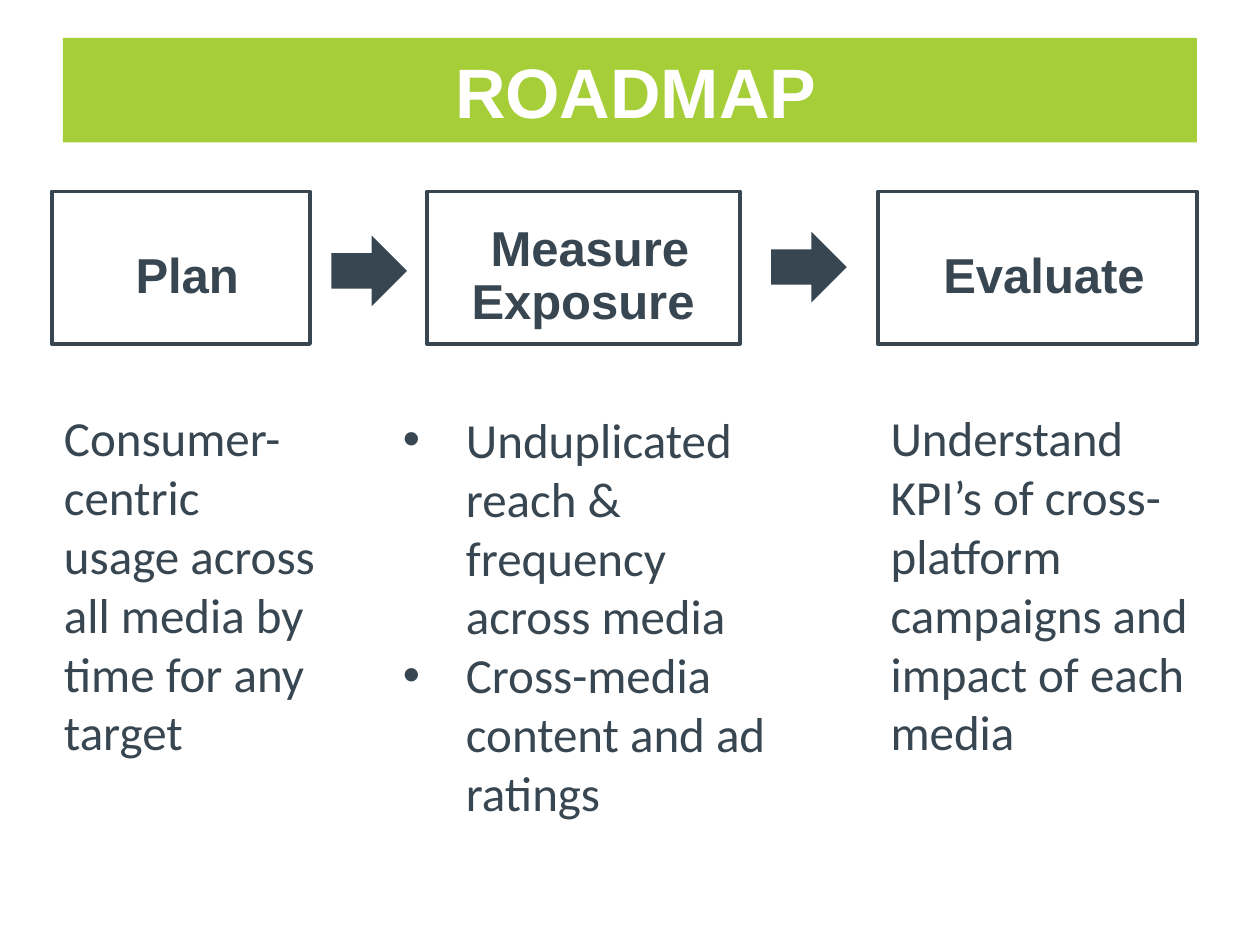
import pptx
import pptx.util
import pptx.dml.color
import pptx.enum.shapes
import pptx.enum.text
import pptx.oxml.ns
import lxml.etree

COLORS = {"green": "A6CE39", "slate": "374651", "white": "FFFFFF"}
Inches, Pt = pptx.util.Inches, pptx.util.Pt
SHAPES = pptx.enum.shapes.MSO_SHAPE
ALIGN = pptx.enum.text.PP_ALIGN

deck = pptx.Presentation()
deck.slide_width, deck.slide_height = Inches(10), Inches(7.5)
page = deck.slides.add_slide(deck.slide_layouts[6])


def area(left, top, width, height):
    """Turn percentages of the slide's size into lengths."""
    across, down = deck.slide_width / 100, deck.slide_height / 100
    return [int(left * across), int(top * down), int(width * across), int(height * down)]


def write(box, paragraphs, size=28, color="slate", font="Calibri", bold=False,
          align=ALIGN.LEFT, spacing=None, bullet=False, insets=(0.1, 0.05),
          anchor=pptx.enum.text.MSO_ANCHOR.TOP):
    frame = box.text_frame
    frame.word_wrap = True
    frame.vertical_anchor = anchor
    frame.margin_left, frame.margin_top = map(Inches, insets)
    for index, text in enumerate(paragraphs):
        para = frame.add_paragraph() if index else frame.paragraphs[0]
        para.alignment = align
        if spacing:
            para.line_spacing = spacing
        if bullet:
            props = para._p.get_or_add_pPr()
            props.set("marL", str(Inches(0.5)))
            props.set("indent", str(Inches(-0.5)))
            for tag, name, value in (("a:buFont", "typeface", "Arial"), ("a:buChar", "char", "•")):
                lxml.etree.SubElement(props, pptx.oxml.ns.qn(tag)).set(name, value)
        for number, line in enumerate(text.split("\n")):
            if number:
                para.add_line_break()
            span = para.add_run()
            span.text = line
            span.font.size = Pt(size)
            span.font.name = font
            span.font.bold = bold
            span.font.color.rgb = pptx.dml.color.RGBColor.from_string(COLORS[color])


heading = {"font": "Arial", "bold": True, "align": ALIGN.CENTER,
           "anchor": pptx.enum.text.MSO_ANCHOR.MIDDLE}
slate = pptx.dml.color.RGBColor.from_string(COLORS["slate"])

# Title bar
banner = page.shapes.add_shape(SHAPES.RECTANGLE, *area(5, 4, 90, 11.07))
banner.shadow.inherit = False
banner.fill.solid()
banner.fill.fore_color.rgb = pptx.dml.color.RGBColor.from_string(COLORS["green"])
banner.line.fill.background()
write(banner, ["ROADMAP"], size=40, color="white", insets=(0.19, 0.05), **heading)

# Stages: label, left and width of the box, left and width of the text below, text
stages = [
    ("Plan", 4.1, 20.5, 4.1, 22.3,
     ["Consumer-centric usage across all media by time for any target"]),
    ("Measure\nExposure ", 33.9, 24.8, 31, 31.6,
     ["Unduplicated reach & frequency across media", "Cross-media content and ad ratings"]),
    ("Evaluate", 69.7, 25.3, 69.7, 27,
     ["Understand KPI’s of cross-platform campaigns and impact of each media"]),
]
for label, left, width, text_left, text_width, details in stages:
    stage = page.shapes.add_shape(SHAPES.RECTANGLE, *area(left, 20.27, width, 16.13))
    stage.shadow.inherit = False
    stage.fill.background()
    stage.line.color.rgb = slate
    stage.line.width = Pt(2.25)
    write(stage, [label], spacing=0.9, insets=(0.2, 0.2), **heading)

    listed = len(details) > 1
    notes = page.shapes.add_textbox(
        *area(text_left, 42.67 if listed else 42.5, text_width, 47.73 if listed else 39.07))
    write(notes, details, bullet=listed)

# Arrows between the stages
for left, top in ((26.3, 24.93), (61.2, 24.53)):
    arrow = page.shapes.add_shape(SHAPES.RIGHT_ARROW, *area(left, top, 6, 7.47))
    arrow.shadow.inherit = False
    arrow.fill.solid()
    arrow.fill.fore_color.rgb = slate
    arrow.line.fill.background()

deck.save("out.pptx")
